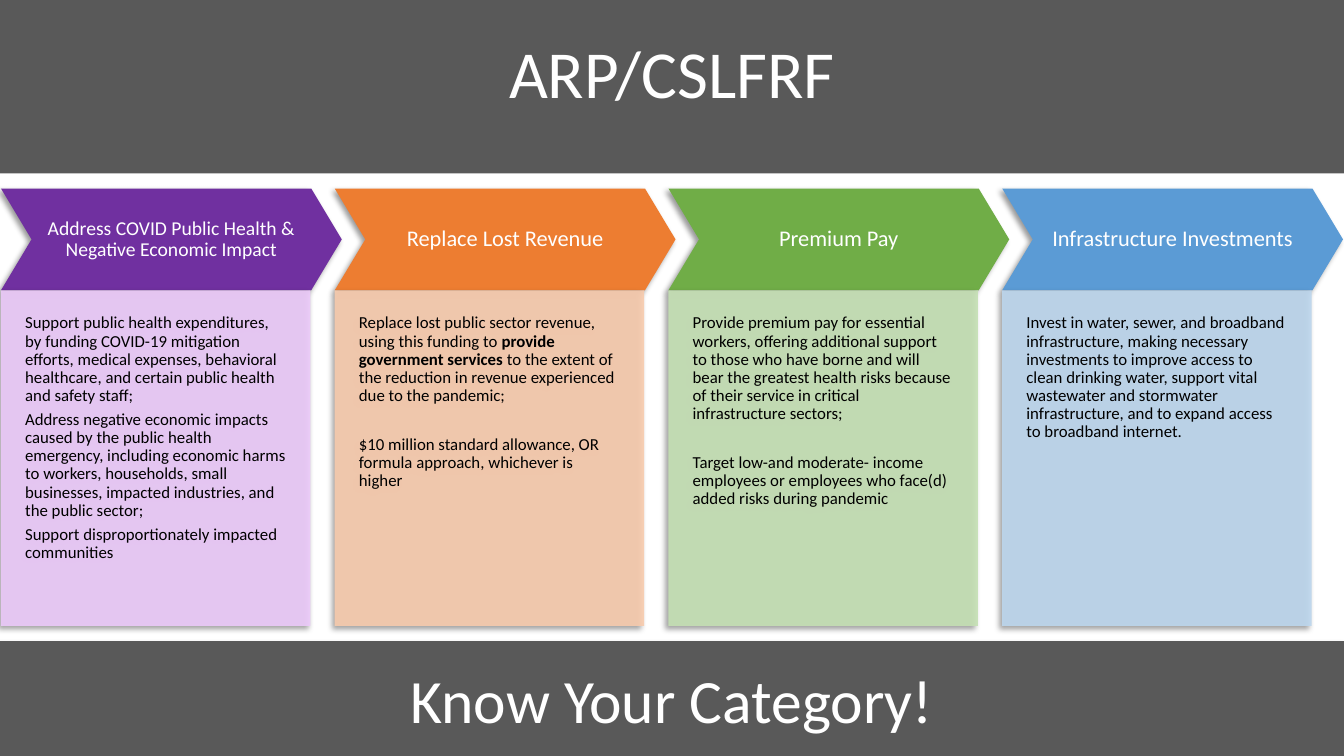
from lxml import etree
from pptx import Presentation
from pptx import util as u
from pptx.dml.color import RGBColor
from pptx.enum import shapes, text
from pptx.oxml.ns import qn

TITLE = "ARP/CSLFRF"
FOOTER = "Know Your Category!"
FONT, WHITE, BLACK, BAND = "Calibri", "FFFFFF", "000000", "595959"

CATEGORIES = [
    dict(heading="Address COVID Public Health & Negative Economic Impact",
         size=14, dark="7030A0", light="ECCAFA", gap=4.2, details=[
             ["Support public health expenditures, by funding COVID-19 mitigation efforts, "
              "medical expenses, behavioral healthcare, and certain public health and safety staff;"],
             ["Address negative economic impacts caused by the public health emergency, including "
              "economic harms to workers, households, small businesses, impacted industries, "
              "and the public sector;"],
             ["Support disproportionately impacted communities"]]),
    dict(heading="Replace Lost Revenue",
         size=16, dark="ED7D31", light="F8CBAD", gap=22, details=[
             ["Replace lost public sector revenue, using this funding to ",
              "provide government services ",
              "to the extent of the reduction in revenue experienced due to the pandemic;"],
             ["$10 million standard allowance, OR formula approach, whichever is higher"]]),
    dict(heading="Premium Pay",
         size=16, dark="70AD47", light="C5E0B4", gap=22, details=[
             ["Provide premium pay for essential workers, offering additional support to those "
              "who have borne and will bear the greatest health risks because of their service "
              "in critical infrastructure sectors;"],
             ["Target low-and moderate- income employees or employees who face(d) added risks "
              "during pandemic"]]),
    dict(heading="Infrastructure Investments",
         size=16, dark="5B9BD5", light="BDD7EE", gap=4.2, details=[
             ["Invest in water, sewer, and broadband infrastructure, making necessary investments "
              "to improve access to clean drinking water, support vital wastewater and stormwater "
              "infrastructure, and to expand access to broadband internet."]]),
]

WIDTH, HEIGHT = 13.33, 7.5
COLUMN_LEFT, PITCH = 0.01, 3.31
CHEVRON_WIDTH, CHEVRON_TOP, CHEVRON_HEIGHT = 3.38, 1.87, 1.01
PANEL_WIDTH, PANEL_HEIGHT = 3.07, 3.33
PANEL_TOP = CHEVRON_TOP + CHEVRON_HEIGHT
FOOTER_TOP = 6.36

deck = Presentation()
deck.slide_width, deck.slide_height = u.Inches(WIDTH), u.Inches(HEIGHT)
slide = deck.slides.add_slide(deck.slide_layouts[6])


def color(value):
    return RGBColor.from_string(value)


def add_shadow(shape):
    effects = shape._element.spPr.find(qn("a:effectLst"))
    shadow = etree.SubElement(effects, qn("a:outerShdw"), blurRad=str(u.Pt(4)),
                              dist=str(u.Pt(3)), dir="8100000", algn="tr", rotWithShape="0")
    tint = etree.SubElement(shadow, qn("a:srgbClr"), val=BLACK)
    etree.SubElement(tint, qn("a:alpha"), val="40000")


def add_block(kind, box, fill, shadowed=True):
    block = slide.shapes.add_shape(kind, *map(u.Inches, box))
    block.shadow.inherit = False
    block.fill.solid()
    block.fill.fore_color.rgb = color(fill)
    block.line.fill.background()
    if shadowed:
        add_shadow(block)
    return block


def write(shape, paragraphs, size, ink, insets=(0.1, 0.05, 0.1, 0.05),
          align=text.PP_ALIGN.CENTER, anchor=text.MSO_ANCHOR.MIDDLE, gap=0, spacing=0.9):
    frame = shape.text_frame
    frame.word_wrap = True
    frame.vertical_anchor = anchor
    (frame.margin_left, frame.margin_top,
     frame.margin_right, frame.margin_bottom) = map(u.Inches, insets)
    for index, pieces in enumerate(paragraphs):
        paragraph = frame.add_paragraph() if index else frame.paragraphs[0]
        paragraph.alignment = align
        paragraph.line_spacing = spacing
        paragraph.space_after = u.Pt(gap)
        for position, piece in enumerate(pieces):
            run = paragraph.add_run()
            run.text = piece
            run.font.name, run.font.size = FONT, u.Pt(size)
            run.font.bold = position == 1
            run.font.color.rgb = color(ink)


RECTANGLE = shapes.MSO_SHAPE.RECTANGLE
add_block(RECTANGLE, (0, 0, WIDTH, 1.72), BAND, shadowed=False)
title = slide.shapes.add_textbox(*map(u.Inches, (0.7, 0.14, 11.93, 1.24)))
write(title, [[TITLE]], 48, WHITE)

for column, category in enumerate(CATEGORIES):
    left = COLUMN_LEFT + column * PITCH
    chevron = add_block(shapes.MSO_SHAPE.CHEVRON,
                        (left, CHEVRON_TOP, CHEVRON_WIDTH, CHEVRON_HEIGHT), category["dark"])
    chevron.adjustments[0] = 0.3
    write(chevron, [[category["heading"]]], category["size"], WHITE, insets=(0.13,) * 4)

    panel = add_block(RECTANGLE, (left, PANEL_TOP, PANEL_WIDTH, PANEL_HEIGHT), category["light"])
    panel_color = panel._element.spPr.find(qn("a:solidFill"))[0]
    etree.SubElement(panel_color, qn("a:alpha"), val="90000")
    write(panel, category["details"], 12, BLACK, insets=(0.24, 0.24, 0.24, 0.49),
          align=text.PP_ALIGN.LEFT, anchor=text.MSO_ANCHOR.TOP, gap=category["gap"])

footer = add_block(RECTANGLE, (0, FOOTER_TOP, WIDTH, HEIGHT - FOOTER_TOP), BAND)
write(footer, [[FOOTER]], 44, WHITE, spacing=1.0)

deck.save("out.pptx")
